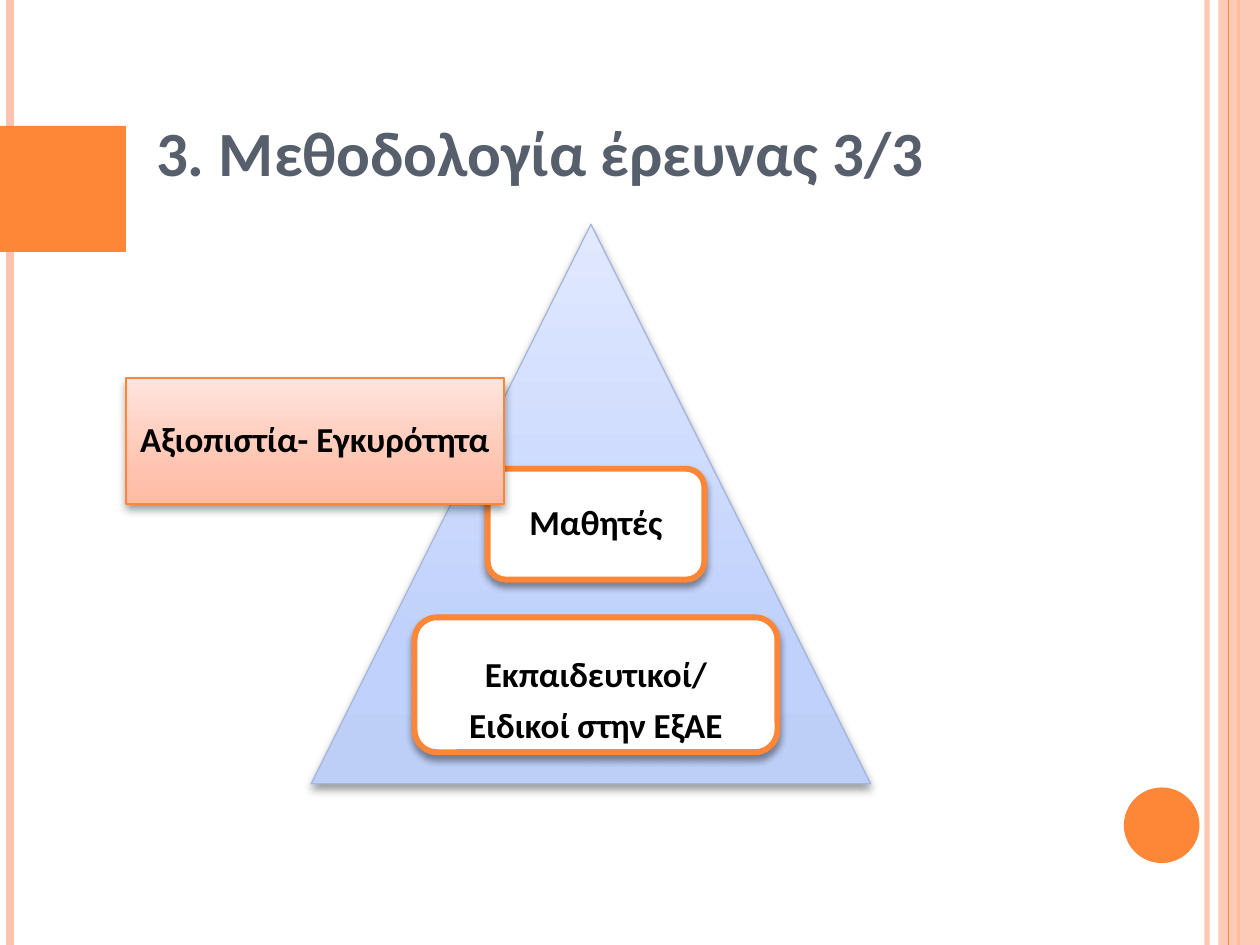
from math import cos, pi, sin

from lxml.etree import SubElement
from pptx import Presentation
from pptx.dml.color import RGBColor
from pptx.enum.shapes import MSO_CONNECTOR, MSO_SHAPE as Shape
from pptx.enum.text import MSO_ANCHOR as Anchor, PP_ALIGN as Align
from pptx.oxml.ns import qn
from pptx.util import Inches, Pt

ORANGE, PEACH, WHITE, BLACK, SLATE = "FE8637", "FEC3AE", "FFFFFF", "000000", "575F6D"


def rgb(value):
    return RGBColor.from_string(value)


def add_color(parent, value, alpha=100):
    color = SubElement(parent, qn("a:srgbClr"), val=value)
    SubElement(color, qn("a:alpha"), val=str(alpha * 1000))


def add_shadow(effects, blur, distance):
    shadow = SubElement(effects, qn("a:outerShdw"), blurRad=str(Pt(blur)),
                        dist=str(Pt(distance)), dir="5400000", rotWithShape="0")
    add_color(shadow, BLACK, 40)


def set_alpha(element, percent):
    for color in element.iter(qn("a:srgbClr")):
        SubElement(color, qn("a:alpha"), val=str(percent * 1000))


def rounded_outline(left, top, width, height, rx, ry, steps=8):
    """Points of a rectangle with elliptical corners, clockwise from the left."""
    right, bottom = left + width, top + height
    centres = [(left + rx, top + ry), (right - rx, top + ry),
               (right - rx, bottom - ry), (left + rx, bottom - ry)]
    points = []
    for corner, (x, y) in enumerate(centres):
        for step in range(steps + 1):
            angle = pi + (corner + step / steps) * pi / 2
            points.append((x + rx * cos(angle), y + ry * sin(angle)))
    return points


class SlideBuilder:
    """Holds the current slide and its text style."""

    font = "Calibri"

    def __init__(self, slide):
        self.slide = slide

    def style(self, shape, fill, line=None, weight=0.75, blur=None):
        """Fill with a colour, or with a list of (position, colour) stops."""
        if isinstance(fill, str):
            shape.fill.solid()
            shape.fill.fore_color.rgb = rgb(fill)
        else:
            shape.fill.gradient()
            shape.fill.gradient_angle = 90
            stops = next(shape._element.spPr.iter(qn("a:gsLst")))
            stops.clear()
            for position, color in fill:
                add_color(SubElement(stops, qn("a:gs"), pos=str(position * 1000)), color)
        if line:
            shape.line.color.rgb = rgb(line)
            shape.line.width = Pt(weight)
        else:
            shape.line.fill.background()
        shape.shadow.inherit = False
        if blur:
            add_shadow(shape._element.spPr.find(qn("a:effectLst")), blur, 3)
        return shape

    def shape(self, kind, box, fill, **style):
        shape = self.slide.shapes.add_shape(kind, *map(Inches, box))
        return self.style(shape, fill, **style)

    def freeform(self, points, fill, **style):
        builder = self.slide.shapes.build_freeform(*points[0], scale=Inches(1))
        builder.add_line_segments(points[1:], close=True)
        return self.style(builder.convert_to_shape(), fill, **style)

    def rule(self, x, color, weight, alpha=100):
        """Vertical line over the full slide height."""
        line = self.slide.shapes.add_connector(
            MSO_CONNECTOR.STRAIGHT, Inches(x), 0, Inches(x), Inches(7.5))
        line.line.color.rgb = rgb(color)
        line.line.width = Pt(weight)
        set_alpha(line._element.spPr, alpha)
        SubElement(line._element.spPr, qn("a:effectLst"))

    def text(self, shape, text, size=20, color=BLACK, align=Align.CENTER,
             anchor=Anchor.MIDDLE, insets=(0.08, 0.08, 0.08, 0.08), spacing=0.9):
        frame = shape.text_frame
        frame.word_wrap = True
        frame.vertical_anchor = anchor
        (frame.margin_left, frame.margin_top,
         frame.margin_right, frame.margin_bottom) = map(Inches, insets)
        frame.text = text
        for paragraph in frame.paragraphs:
            paragraph.alignment = align
            paragraph.line_spacing = spacing
            if paragraph is not frame.paragraphs[-1]:
                paragraph.space_after = Pt(size * 0.35)
            for run in paragraph.runs:
                run.font.size = Pt(size)
                run.font.bold = True
                run.font.color.rgb = rgb(color)
                run.font.name = self.font

    def title(self, box, text):
        title = self.slide.shapes.add_textbox(*map(Inches, box))
        self.text(title, text, 36, SLATE, Align.LEFT, Anchor.BOTTOM,
                  (0.1, 0.05, 0.1, 0.05), 1.0)
        properties = title.text_frame.paragraphs[0].runs[0].font._element
        effects = SubElement(properties, qn("a:effectLst"))
        properties.find(qn("a:solidFill")).addnext(effects)
        add_shadow(effects, 3, 3)


def main():
    deck = Presentation()
    deck.slide_width, deck.slide_height = Inches(10), Inches(7.5)
    page = SlideBuilder(deck.slides.add_slide(deck.slide_layouts[6]))

    page.rule(9.58, PEACH, 3, 93)
    page.rule(0.08, PEACH, 4.5)
    page.rule(9.83, ORANGE, 1.5)
    side_band = page.shape(Shape.RECTANGLE, (9.67, 0, 0.33, 7.5), PEACH)
    set_alpha(side_band._element.spPr, 87)
    page.rule(9.75, ORANGE, 0.75)
    page.shape(Shape.OVAL, (8.92, 6.25, 0.6, 0.6), ORANGE)
    page.freeform([(0.18, 0.87), (0.86, 0.87), (0.88, 0.88), (1.13, 1.27),
                   (1.13, 1.32), (0.88, 1.72), (0.86, 1.73), (0.18, 1.73)], ORANGE)

    page.shape(Shape.ISOSCELES_TRIANGLE, (2.47, 1.78, 4.44, 4.44),
               [(0, "BDCEF7"), (25, "C0D1FB"), (100, "E0E9FF")],
               line="A4B6DF", blur=5.2)
    frame_style = dict(fill=WHITE, line=ORANGE, weight=3.35, blur=4)
    students = page.shape(Shape.ROUNDED_RECTANGLE, (3.87, 3.72, 1.72, 0.88), **frame_style)
    page.text(students, "Μαθητές")
    teachers = page.shape(Shape.ROUNDED_RECTANGLE, (3.29, 4.9, 2.88, 1.07), **frame_style)
    page.text(teachers, "Εκπαιδευτικοί/\nΕιδικοί στην ΕξΑΕ",
              anchor=Anchor.BOTTOM, insets=(0.08, 0.08, 0.08, 0))

    page.title((1.14, 0.3, 7.53, 1.25), "3. Μεθοδολογία έρευνας 3/3")
    reliability = page.freeform(
        rounded_outline(0.98, 3.04, 2.52, 1.42, 0.15, 0.24),
        [(0, "FFBCA5"), (25, "FFC2AE"), (100, "FFE4DD")], line="FF8636", blur=5.2)
    page.text(reliability, "Αξιοπιστία- Εγκυρότητα", insets=(0.11, 0.08, 0.11, 0.08))

    deck.save("out.pptx")


if __name__ == "__main__":
    main()
